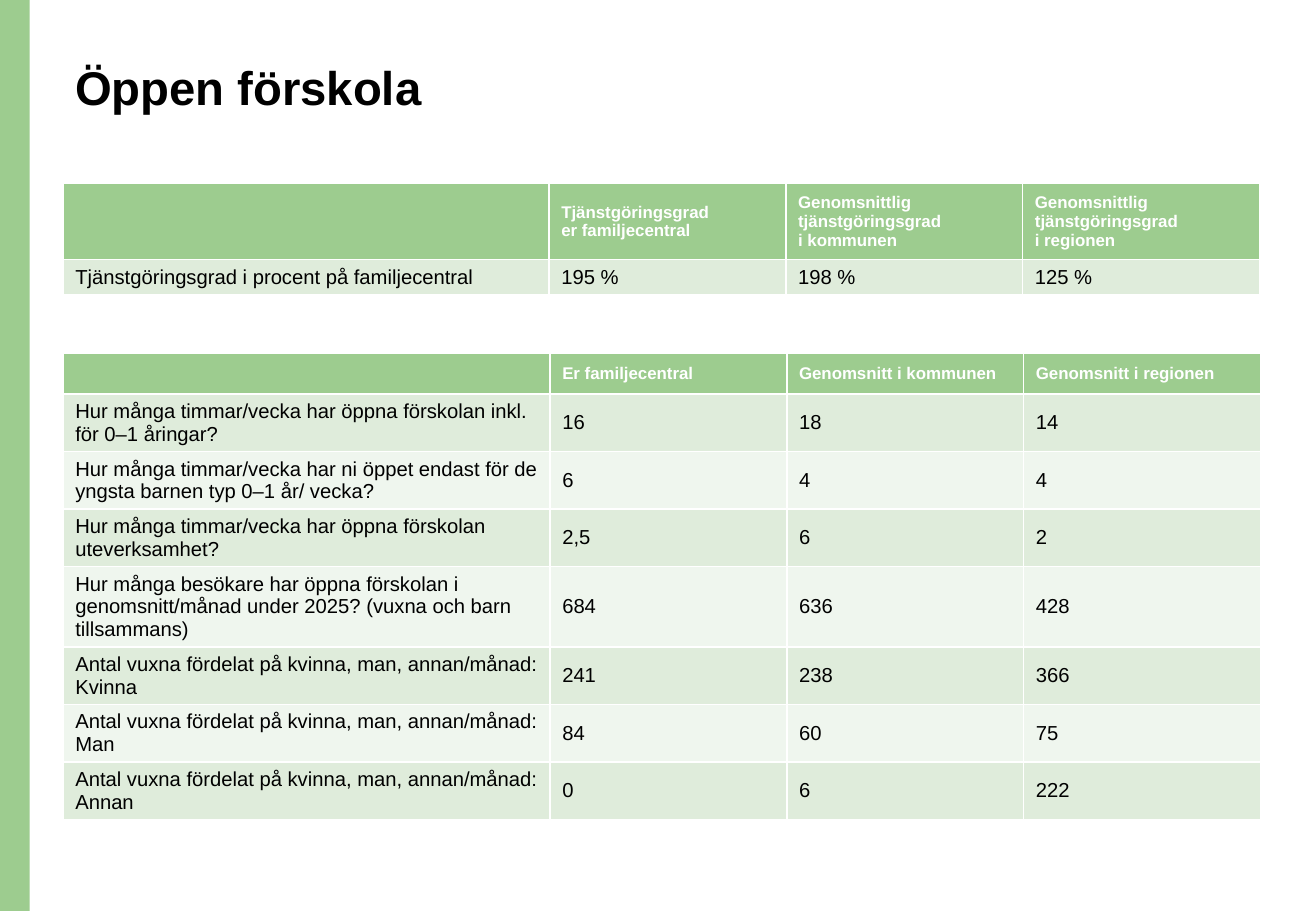
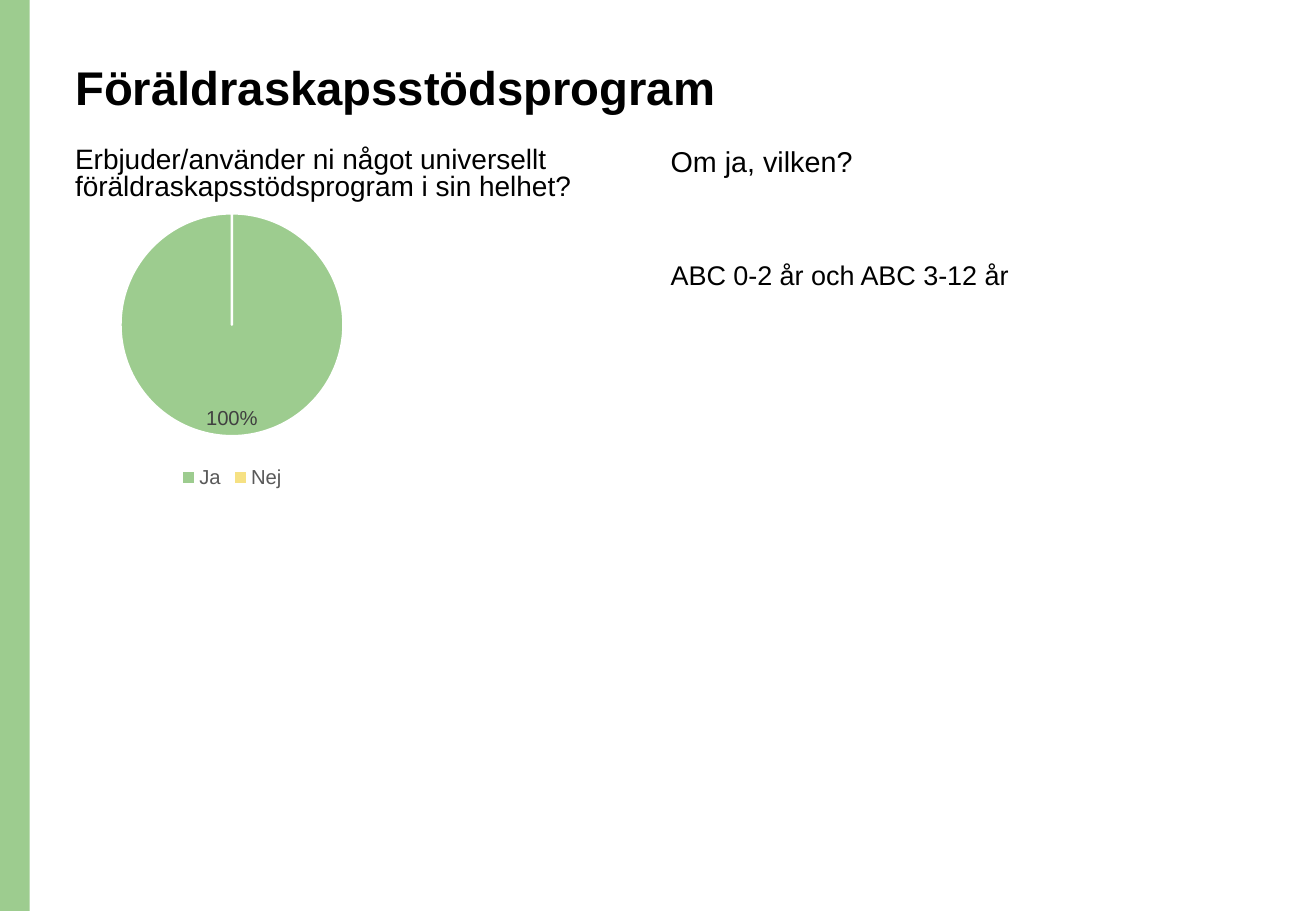
from dataclasses import dataclass
from typing import Any

from lxml.etree import SubElement
from pptx import Presentation
from pptx.chart.data import CategoryChartData
from pptx.dml.color import RGBColor
from pptx.enum.chart import XL_CHART_TYPE as ChartType
from pptx.enum.chart import XL_LABEL_POSITION as LabelPosition
from pptx.enum.chart import XL_LEGEND_POSITION as LegendPosition
from pptx.enum.shapes import MSO_SHAPE as ShapeKind
from pptx.enum.text import MSO_ANCHOR as Anchor
from pptx.enum.text import MSO_AUTO_SIZE as AutoSize
from pptx.enum.text import PP_ALIGN as Align
from pptx.oxml import parse_xml
from pptx.oxml.ns import nsdecls, qn
from pptx.util import Cm, Pt


@dataclass(frozen=True)
class Theme:
    font: str = "Arial"
    green: str = "9DCC8F"
    dark_band: str = "DFECDB"
    light_band: str = "EFF6EE"
    yellow: str = "F6E183"
    white: str = "FFFFFF"
    black: str = "000000"
    label_gray: str = "404040"
    legend_gray: str = "595959"
    title: float = 28
    question: float = 16.6
    follow_up: float = 17
    answer: float = 16
    body: float = 12
    header: float = 10


THEME = Theme()
LEFT = 1.32
TITLE_ONLY = 5


@dataclass(frozen=True)
class TableBlock:
    top: float
    label_width: float
    header: list[str]
    rows: list[list[str]]
    header_height: float
    row_heights: list[float]
    value_width: float = 4.95


@dataclass(frozen=True)
class TextBlock:
    text: str
    left: float
    top: float
    width: float
    size: float
    line_spacing: float = 0.9
    height: float = 1.45


STAFFING = TableBlock(
    top=3.84,
    label_width=10.16,
    header=[
        "",
        "Tjänstgöringsgrad\ner familjecentral",
        "Genomsnittlig tjänstgöringsgrad\ni kommunen",
        "Genomsnittlig tjänstgöringsgrad\ni regionen",
    ],
    rows=[["Tjänstgöringsgrad i procent på familjecentral", "195 %", "198 %", "125 %"]],
    header_height=1.59,
    row_heights=[0.72],
)

ACTIVITY = TableBlock(
    top=7.38,
    label_width=10.18,
    header=["", "Er familjecentral", "Genomsnitt i kommunen", "Genomsnitt i regionen"],
    rows=[
        ["Hur många timmar/vecka har öppna förskolan inkl. för 0–1 åringar?", "16", "18", "14"],
        ["Hur många timmar/vecka har ni öppet endast för de yngsta barnen typ 0–1 år/ vecka?", "6", "4", "4"],
        ["Hur många timmar/vecka har öppna förskolan uteverksamhet?", "2,5", "6", "2"],
        [
            "Hur många besökare har öppna förskolan i genomsnitt/månad under 2025? (vuxna och barn tillsammans)",
            "684", "636", "428",
        ],
        ["Antal vuxna fördelat på kvinna, man, annan/månad: Kvinna", "241", "238", "366"],
        ["Antal vuxna fördelat på kvinna, man, annan/månad: Man", "84", "60", "75"],
        ["Antal vuxna fördelat på kvinna, man, annan/månad: Annan", "0", "6", "222"],
    ],
    header_height=0.86,
    row_heights=[1.2, 1.2, 1.2, 1.67, 1.2, 1.2, 1.2],
)

PROGRAM_TEXTS = [
    TextBlock(
        "Erbjuder/använder ni något universellt föräldraskapsstödsprogram i sin helhet?",
        LEFT, 2.97, 13.92, THEME.question, 0.8,
    ),
    TextBlock("Om ja, vilken?", 13.77, 2.97, 10.03, THEME.follow_up),
    TextBlock("ABC 0-2 år och ABC 3-12 år", 13.77, 5.36, 10.03, THEME.answer),
]


def set_attributes(target: Any, values: dict[str, Any]) -> None:
    for name, value in values.items():
        setattr(target, name, value)


def format_font(font: Any, size: float, color: str, bold: bool = False) -> None:
    set_attributes(font, {"name": THEME.font, "size": Pt(size), "bold": bold})
    font.color.rgb = RGBColor.from_string(color)


def fill_solid(fill: Any, color: str) -> None:
    fill.solid()
    fill.fore_color.rgb = RGBColor.from_string(color)


def write_text(frame: Any, text: str, size: float, color: str, bold: bool = False) -> None:
    frame.text = text
    for paragraph in frame.paragraphs:
        paragraph.alignment = Align.LEFT
        for run in paragraph.runs:
            format_font(run.font, size, color, bold)
        if not paragraph.runs:
            SubElement(paragraph._p, qn("a:endParaRPr"), sz=str(int(size * 100)))


def add_band(presentation: Any, slide: Any) -> None:
    band = slide.shapes.add_shape(ShapeKind.RECTANGLE, 0, 0, Cm(0.62), presentation.slide_height)
    band.shadow.inherit = False
    fill_solid(band.fill, THEME.green)
    band.line.fill.background()
    band.element.nvSpPr.cNvPr.set("id", "20")
    slide.slide_layout.shapes.element.insert(2, band.element)


def add_titled_slide(presentation: Any, title: str) -> Any:
    slide = presentation.slides.add_slide(presentation.slide_layouts[TITLE_ONLY])
    shape = slide.shapes.title
    set_attributes(shape, {"left": Cm(LEFT), "top": Cm(1.22), "width": Cm(23.72), "height": Cm(2.59)})
    frame = shape.text_frame
    write_text(frame, title, THEME.title, THEME.black, True)
    set_attributes(frame, {"word_wrap": True, "auto_size": AutoSize.NONE, "vertical_anchor": Anchor.TOP})
    frame.paragraphs[0].line_spacing = 0.9
    return slide


def add_table(slide: Any, block: TableBlock) -> None:
    heights = [block.header_height, *block.row_heights]
    widths = [block.label_width] + [block.value_width] * (len(block.header) - 1)
    table = slide.shapes.add_table(
        len(heights), len(widths), Cm(LEFT), Cm(block.top), Cm(sum(widths)), Cm(sum(heights))
    ).table
    for column, width in zip(table.columns, widths):
        column.width = Cm(width)
    for index, (row, height, texts) in enumerate(zip(table.rows, heights, [block.header, *block.rows])):
        row.height = Cm(height)
        is_header = index == 0
        band_color = THEME.dark_band if index % 2 else THEME.light_band
        for cell, text in zip(row.cells, texts):
            fill_solid(cell.fill, THEME.green if is_header else band_color)
            cell.vertical_anchor = Anchor.MIDDLE
            write_text(
                cell.text_frame,
                text,
                THEME.header if is_header else THEME.body,
                THEME.white if is_header else THEME.black,
                is_header,
            )


def add_text(slide: Any, block: TextBlock) -> None:
    frame = slide.shapes.add_textbox(
        Cm(block.left), Cm(block.top), Cm(block.width), Cm(block.height)
    ).text_frame
    frame.word_wrap = True
    write_text(frame, block.text, block.size, THEME.black)
    frame.paragraphs[0].line_spacing = block.line_spacing


def add_answer_pie(slide: Any) -> None:
    data = CategoryChartData(number_format="0%")
    data.categories = ["Ja", "Nej"]
    data.add_series("Series 1", [1, 0])
    chart = slide.shapes.add_chart(
        ChartType.PIE, Cm(LEFT), Cm(4.11), Cm(7.06), Cm(6.2), data
    ).chart
    set_attributes(chart, {"has_title": False, "has_legend": True})
    format_font(chart.font, THEME.header, THEME.black)
    set_attributes(chart.legend, {"position": LegendPosition.BOTTOM, "include_in_layout": False})
    format_font(chart.legend.font, THEME.body, THEME.legend_gray)
    plot = chart.plots[0]
    plot.vary_by_categories = True
    series = plot.series[0]
    for index, color in enumerate([THEME.green, THEME.yellow]):
        point_format = series.points[index].format
        fill_solid(point_format.fill, color)
        fill_solid(point_format.line.fill, THEME.white)
        point_format.line.width = Pt(1.5)
    labels = series.data_labels
    set_attributes(labels, {
        "show_value": True,
        "number_format": "0%",
        "number_format_is_linked": False,
        "position": LabelPosition.INSIDE_END,
    })
    format_font(labels.font, THEME.body, THEME.label_gray)
    hidden_label = parse_xml(
        f'<c:dLbl {nsdecls("c")}><c:idx val="1"/><c:delete val="1"/></c:dLbl>'
    )
    chart.element.xpath("//c:ser/c:dLbls")[0].insert(0, hidden_label)


def main() -> None:
    presentation = Presentation()
    set_attributes(presentation, {"slide_width": Cm(27.51), "slide_height": Cm(19.05)})

    preschool = add_titled_slide(presentation, "Öppen förskola")
    add_band(presentation, preschool)
    for block in (STAFFING, ACTIVITY):
        add_table(preschool, block)

    program = add_titled_slide(presentation, "Föräldraskapsstödsprogram")
    add_answer_pie(program)
    for block in PROGRAM_TEXTS:
        add_text(program, block)

    presentation.save("out.pptx")


if __name__ == "__main__":
    main()
